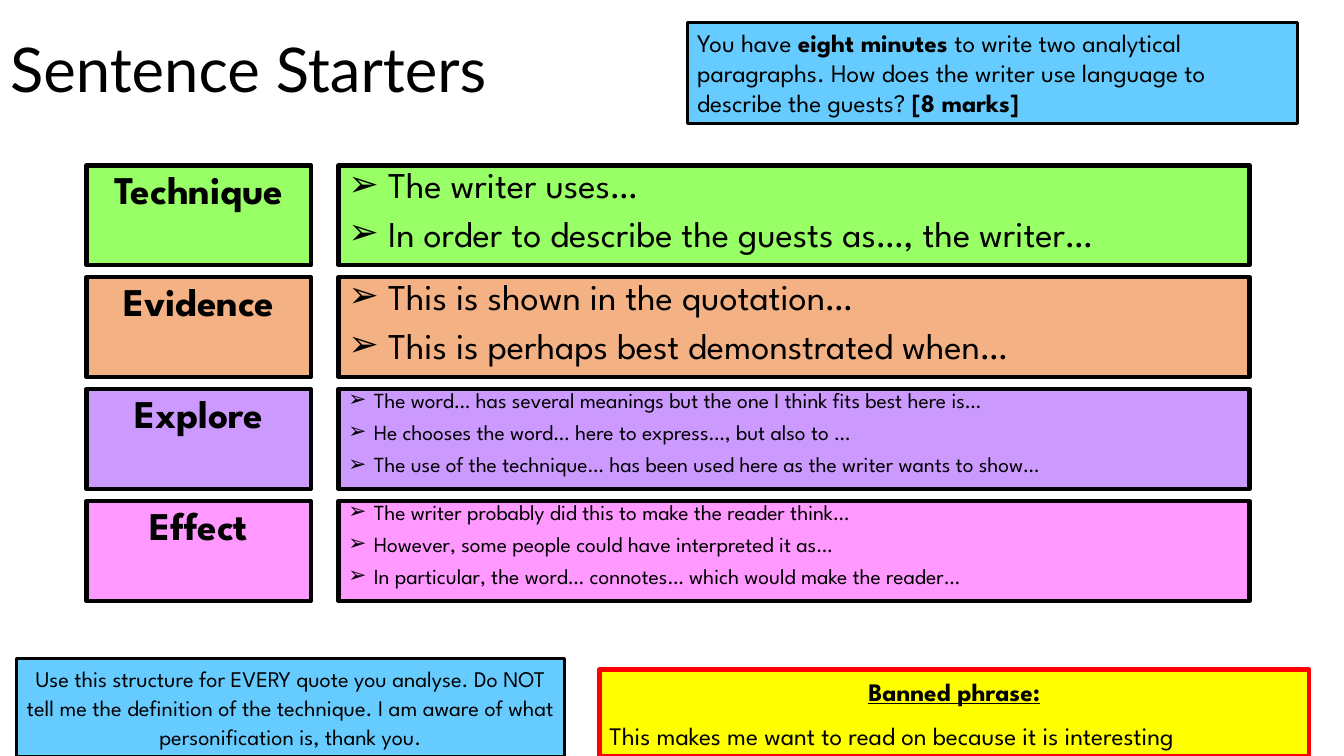
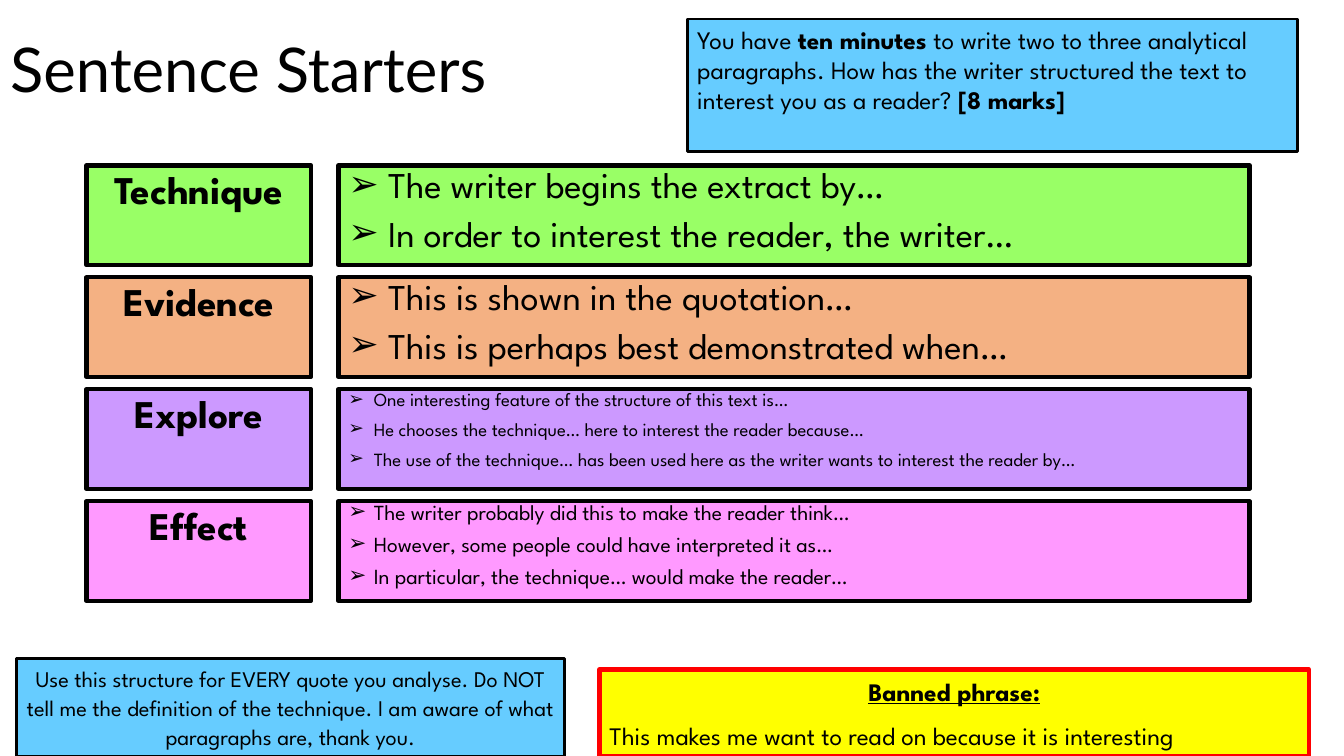
from dataclasses import dataclass

from lxml import etree
from pptx import Presentation
from pptx.dml.color import RGBColor
from pptx.enum.shapes import MSO_SHAPE
from pptx.enum.text import MSO_ANCHOR, MSO_AUTO_SIZE, PP_ALIGN
from pptx.oxml.ns import qn
from pptx.util import Cm, Pt

RECTANGLE = MSO_SHAPE.RECTANGLE
TOP, MIDDLE = MSO_ANCHOR.TOP, MSO_ANCHOR.MIDDLE
LEFT, CENTER = PP_ALIGN.LEFT, PP_ALIGN.CENTER
NO_AUTOFIT = MSO_AUTO_SIZE.NONE


@dataclass(frozen=True)
class Theme:
    title_font: str = "Lato"
    text_font: str = "League Spartan"
    ink: str = "000000"
    blue: str = "66CCFF"
    yellow: str = "FFFF00"
    red: str = "FF0000"
    steps: tuple = ("99FF66", "F4B183", "CC99FF", "FF99FF")
    title_size: float = 44
    label_size: float = 28
    note_size: float = 18
    advice_size: float = 16
    large: float = 25.9
    small: float = 15.4
    smallest: float = 13.3
    thick: float = 3
    thin: float = 2


THEME = Theme()

TITLE = "Sentence Starters"
STEPS = ("Technique", "Evidence", "Explore", "Effect")
ADVICE = ("Use this structure for EVERY quote you analyse. Do NOT tell me the definition "
          "of the technique. I am aware of what {}, thank you.")
BANNED = ("Banned phrase:", "This makes me want to read on because it is interesting")
EVIDENCE = ("This is shown in the quotation…", "This is perhaps best demonstrated when…")
EFFECT = ("The writer probably did this to make the reader think…",
          "However, some people could have interpreted it as…")

SLIDES = [
    {
        "task": ("You have ", "eight minutes ",
                 "to write two analytical paragraphs. How does the writer use language "
                 "to describe the guests? ", "[8 marks]"),
        "task_top": 0.56, "task_height": 2.56,
        "known": "personification is",
        "starters": [
            (THEME.large, ("The writer uses…",
                           "In order to describe the guests as…, the writer…")),
            (THEME.large, EVIDENCE),
            (THEME.small, ("The word… has several meanings but the one I think fits best here is…",
                           "He chooses the word… here to express…, but also to …",
                           "The use of the technique… has been used here as the writer "
                           "wants to show…")),
            (THEME.small, (*EFFECT, "In particular, the word… connotes… which would make "
                                    "the reader…")),
        ],
    },
    {
        "task": ("You have ", "ten minutes ",
                 "to write two to three analytical paragraphs. How has the writer structured "
                 "the text to interest you as a reader? ", "[8 marks]"),
        "task_top": 0.48, "task_height": 3.33,
        "known": "paragraphs are",
        "starters": [
            (THEME.large, ("The writer begins the extract by…",
                           "In order to interest the reader, the writer…")),
            (THEME.large, EVIDENCE),
            (THEME.smallest, ("One interesting feature of the structure of this text is…",
                              "He chooses the technique… here to interest the reader because…",
                              "The use of the technique… has been used here as the writer "
                              "wants to interest the reader by…")),
            (THEME.small, (*EFFECT, "In particular, the technique… would make the reader…")),
        ],
    },
]

SLIDE_WIDTH, SLIDE_HEIGHT = 33.87, 19.05
ROW_TOP, ROW_PITCH, ROW_HEIGHT = 4.17, 2.82, 2.51
LABEL_LEFT, LABEL_WIDTH = 2.18, 5.66
STARTER_LEFT, STARTER_WIDTH = 8.53, 22.96


def place(shape, left, top, width, height):
    shape.left, shape.top, shape.width, shape.height = map(Cm, (left, top, width, height))


def paint(shape, fill, line, weight):
    shape.fill.solid()
    shape.fill.fore_color.rgb = RGBColor.from_string(fill)
    shape.line.color.rgb = RGBColor.from_string(line)
    shape.line.width = Pt(weight)


def set_frame(frame, anchor=TOP):
    frame.word_wrap = True
    frame.auto_size = NO_AUTOFIT
    frame.vertical_anchor = anchor


def add_box(page, bounds, fill, line=THEME.ink, weight=THEME.thick):
    box = page.shapes.add_shape(RECTANGLE, *map(Cm, bounds))
    box.shadow.inherit = False
    paint(box, fill, line, weight)
    set_frame(box.text_frame)
    return box


def style(para, size, align=LEFT, font=THEME.text_font, bold=False,
          spacing=1.0, before=0, after=0):
    para.alignment = align
    para.line_spacing = spacing
    para.space_before, para.space_after = Pt(before), Pt(after)
    para.font.name, para.font.size, para.font.bold = font, Pt(size), bold
    para.font.color.rgb = RGBColor.from_string(THEME.ink)


def add_paras(frame, lines):
    """Write one paragraph per line and return the paragraphs."""
    frame.text = "\n".join(lines)
    return frame.paragraphs


def set_bullet(para, indent=0.0, char=None):
    """Hang the text by indent after char, or switch the bullet off."""
    props = para._p.get_or_add_pPr()
    props.set("marL", str(Cm(indent)))
    props.set("indent", str(-Cm(indent)))
    if char:
        bullet_font = etree.Element(qn("a:buFont"), typeface="Wingdings")
        bullet = etree.Element(qn("a:buChar"), char=char)
        parts = [bullet_font, bullet]
        bullet_font.set("typeface", "Arial")
    else:
        parts = [etree.Element(qn("a:buNone"))]
    defaults = props.find(qn("a:defRPr"))
    for part in parts:
        defaults.addprevious(part)


def fill_title(page):
    title = page.shapes.title
    place(title, 0, 0, 29.21, 3.68)
    set_frame(title.text_frame, MIDDLE)
    title.text_frame.text = TITLE
    style(title.text_frame.paragraphs[0], THEME.title_size, font=THEME.title_font, spacing=0.9)


def add_label(page, row, name, bounds, colour):
    if row == 0:
        label = page.placeholders[1]
        place(label, *bounds)
        paint(label, colour, THEME.ink, THEME.thick)
        set_frame(label.text_frame)
    else:
        label = add_box(page, bounds, colour)
    label.text_frame.text = name
    para = label.text_frame.paragraphs[0]
    style(para, THEME.label_size, CENTER, bold=True, spacing=0.9, before=10)
    set_bullet(para)


def add_starters(page, bounds, colour, size, lines):
    is_large = size == THEME.large
    box = add_box(page, bounds, colour)
    for para in add_paras(box.text_frame, lines):
        style(para, size, spacing=0.8 if is_large else 0.7, before=10)
        set_bullet(para, 1.0 if is_large else 0.64, "➢")


def add_task(page, parts, top, height):
    box = add_box(page, (17.32, top, 15.39, height), THEME.blue, weight=THEME.thin)
    para = box.text_frame.paragraphs[0]
    style(para, THEME.note_size)
    for index, text in enumerate(parts):
        span = para.add_run()
        span.text = text
        span.font.bold = index % 2 == 1


def add_advice(page, known):
    height = 2.46
    box = add_box(page, (0.41, SLIDE_HEIGHT - height, 13.82, height),
                  THEME.blue, weight=THEME.thin)
    para, = add_paras(box.text_frame, [ADVICE.format(known)])
    style(para, THEME.advice_size, CENTER, spacing=1.07, after=8)


def add_banned(page):
    height = 2.18
    box = add_box(page, (15.11, SLIDE_HEIGHT - height, 17.88, height), THEME.yellow, THEME.red)
    heading, phrase = add_paras(box.text_frame, BANNED)
    style(heading, THEME.note_size, CENTER, bold=True, spacing=1.07, after=8)
    heading.font.underline = True
    style(phrase, THEME.note_size, spacing=1.07, after=8)


def build_page(deck, content):
    page = deck.slides.add_slide(deck.slide_layouts[1])
    fill_title(page)
    add_banned(page)
    rows = zip(STEPS, THEME.steps, content["starters"])
    for row, (name, colour, (size, lines)) in enumerate(rows):
        top = ROW_TOP + row * ROW_PITCH
        add_label(page, row, name, (LABEL_LEFT, top, LABEL_WIDTH, ROW_HEIGHT), colour)
        add_starters(page, (STARTER_LEFT, top, STARTER_WIDTH, ROW_HEIGHT), colour, size, lines)
    add_advice(page, content["known"])
    add_task(page, content["task"], content["task_top"], content["task_height"])


def main():
    deck = Presentation()
    deck.slide_width, deck.slide_height = Cm(SLIDE_WIDTH), Cm(SLIDE_HEIGHT)
    for content in SLIDES:
        build_page(deck, content)
    deck.save("out.pptx")


if __name__ == "__main__":
    main()
